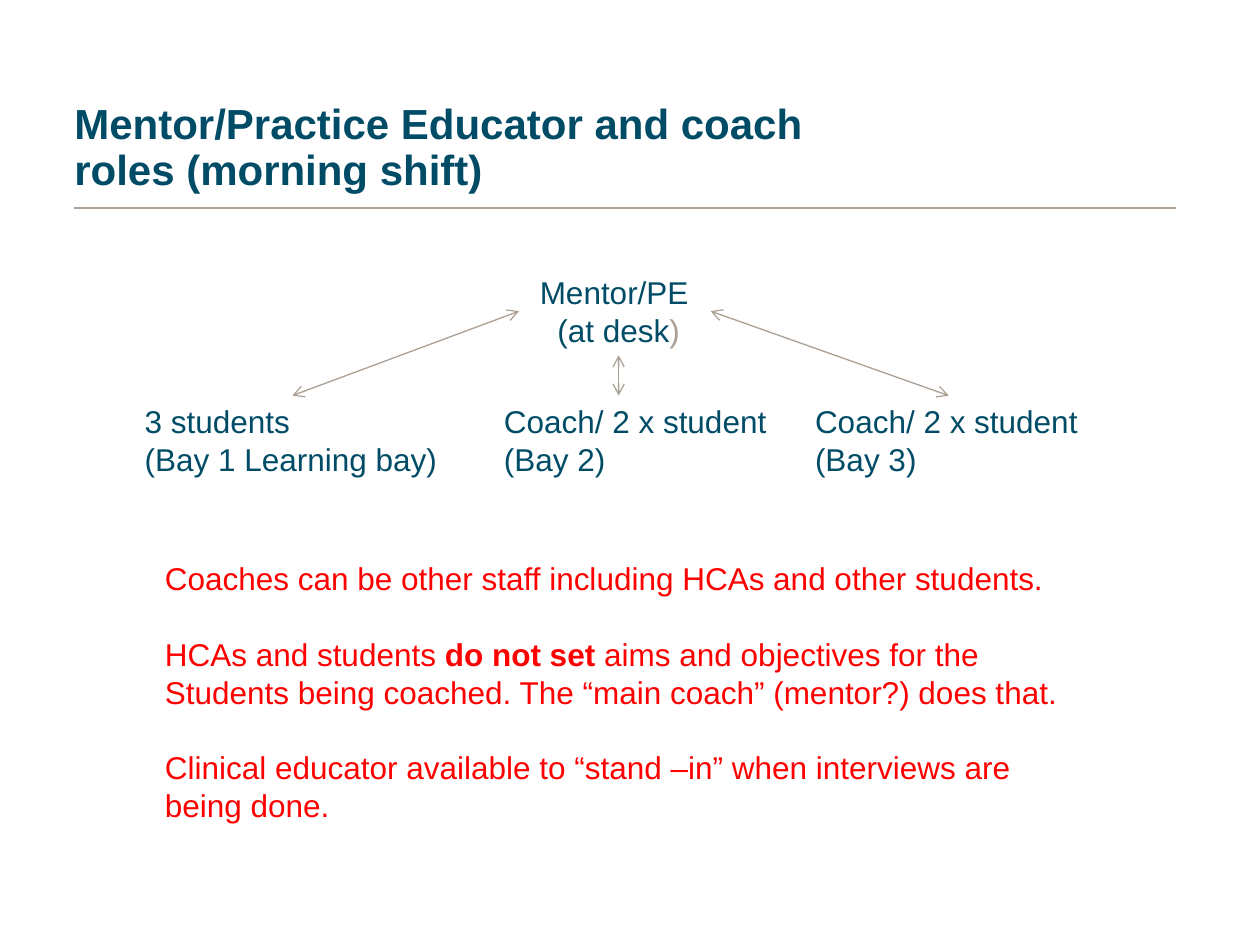
import pptx
import pptx.dml.color
import pptx.enum.shapes
import pptx.enum.text
import pptx.util
from lxml import etree

Inches = pptx.util.Inches
Pt = pptx.util.Pt
ALIGN = pptx.enum.text.PP_ALIGN
ANCHOR = pptx.enum.text.MSO_ANCHOR

TEAL, TAUPE, RED = "004C67", "ACA095", "FF0000"
LEFT, RIGHT = 0.59, 9.33
PARAGRAPH_GAP = 21.6


def color(value):
    return pptx.dml.color.RGBColor.from_string(value)


def add_text(slide, box, paragraphs, size=18, fill=TEAL, wrap=False, inset=(0.1, 0.05),
             anchor=ANCHOR.TOP, bold=False, **paragraph_format):
    """Each paragraph is a list of (text, font overrides); returns the paragraphs."""
    frame = slide.shapes.add_textbox(*map(Inches, box)).text_frame
    across, down = map(Inches, inset)
    frame_format = {"word_wrap": wrap, "vertical_anchor": anchor, "margin_left": across,
                    "margin_right": across, "margin_top": down, "margin_bottom": down}
    for name, value in frame_format.items():
        setattr(frame, name, value)
    for index, runs in enumerate(paragraphs):
        paragraph = frame.add_paragraph() if index else frame.paragraphs[0]
        for name, value in paragraph_format.items():
            setattr(paragraph, name, value)
        for words, overrides in runs:
            run = paragraph.add_run()
            run.text = words
            font_format = {"name": "Arial", "size": Pt(size), "bold": bold}
            for name, value in font_format.items():
                setattr(run.font, name, overrides.get(name, value))
            run.font.color.rgb = color(overrides.get("fill", fill))
    return frame.paragraphs


def add_line(slide, start, end, arrows=False):
    line = slide.shapes.add_connector(pptx.enum.shapes.MSO_CONNECTOR.STRAIGHT,
                                      *map(Inches, start + end))
    line.line.color.rgb = color(TAUPE)
    line.line.width = Pt(0.75)
    namespace = pptx.oxml.ns.qn
    if arrows:
        outline = line.line._get_or_add_ln()
        for tag in ("a:headEnd", "a:tailEnd"):
            etree.SubElement(outline, namespace(tag), type="arrow")
    etree.SubElement(line._element.spPr, namespace("a:effectLst"))


def add_heading(slide, box):
    add_text(slide, box, [[("Mentor/Practice Educator and coach roles (morning shift)", {})]],
             size=24, wrap=True, inset=(0, 0), anchor=ANCHOR.BOTTOM, bold=True,
             line_spacing=0.9)
    rule_y = box[1] + box[3] + 0.11
    add_line(slide, (LEFT, rule_y), (RIGHT, rule_y))


def add_role_tree(slide, top):
    """Mentor above three bays, joined by two-way arrows."""
    row_height, bay_top = 0.71, top + 1.02
    side_y, desk_bottom = top + 0.35, top + 0.7
    add_text(slide, (4.18, top, 1.46, row_height),
             [[("Mentor/PE ", {})], [("(at desk", {}), (")", {"fill": TAUPE})]],
             alignment=ALIGN.CENTER)
    bays = [
        (1.05, 2.54, "3 students", "(Bay 1 Learning bay)", (4.12, side_y), 2.32),
        (3.9, 2.31, "Coach/ 2 x student", "(Bay 2)", (4.91, desk_bottom), 4.91),
        (6.37, 2.31, "Coach/ 2 x student", "(Bay 3)", (5.64, side_y), 7.53),
    ]
    for left, width, people, bay, arrow_start, arrow_x in bays:
        add_text(slide, (left, bay_top, width, row_height), [[(people, {})], [(bay, {})]])
        add_line(slide, arrow_start, (arrow_x, bay_top), arrows=True)


def add_coaching_notes(slide, box):
    notes = [
        [[("Coaches can be other staff including HCAs and other students.", {})]],
        [[("HCAs and students ", {}), ("do not set ", {"bold": True}),
          ("aims and objectives for the", {})],
         [("Students being coached. The “main coach” (mentor?) does that.", {})]],
        [[("Clinical educator available to “stand –in” when interviews are", {})],
         [("being done.", {})]],
    ]
    lines = add_text(slide, box, [line for note in notes for line in note], fill=RED)
    note_start = 0
    for note in notes[:-1]:
        note_start += len(note)
        lines[note_start].space_before = Pt(PARAGRAPH_GAP)


def main():
    deck = pptx.Presentation()
    deck.slide_width, deck.slide_height = Inches(10), Inches(7.5)
    slide = deck.slides.add_slide(deck.slide_layouts[6])
    add_heading(slide, (LEFT, 0.75, 6.3, 0.79))
    add_role_tree(slide, 2.12)
    add_coaching_notes(slide, (1.21, 4.39, 7.51, 2.22))
    deck.save("out.pptx")


if __name__ == "__main__":
    main()
